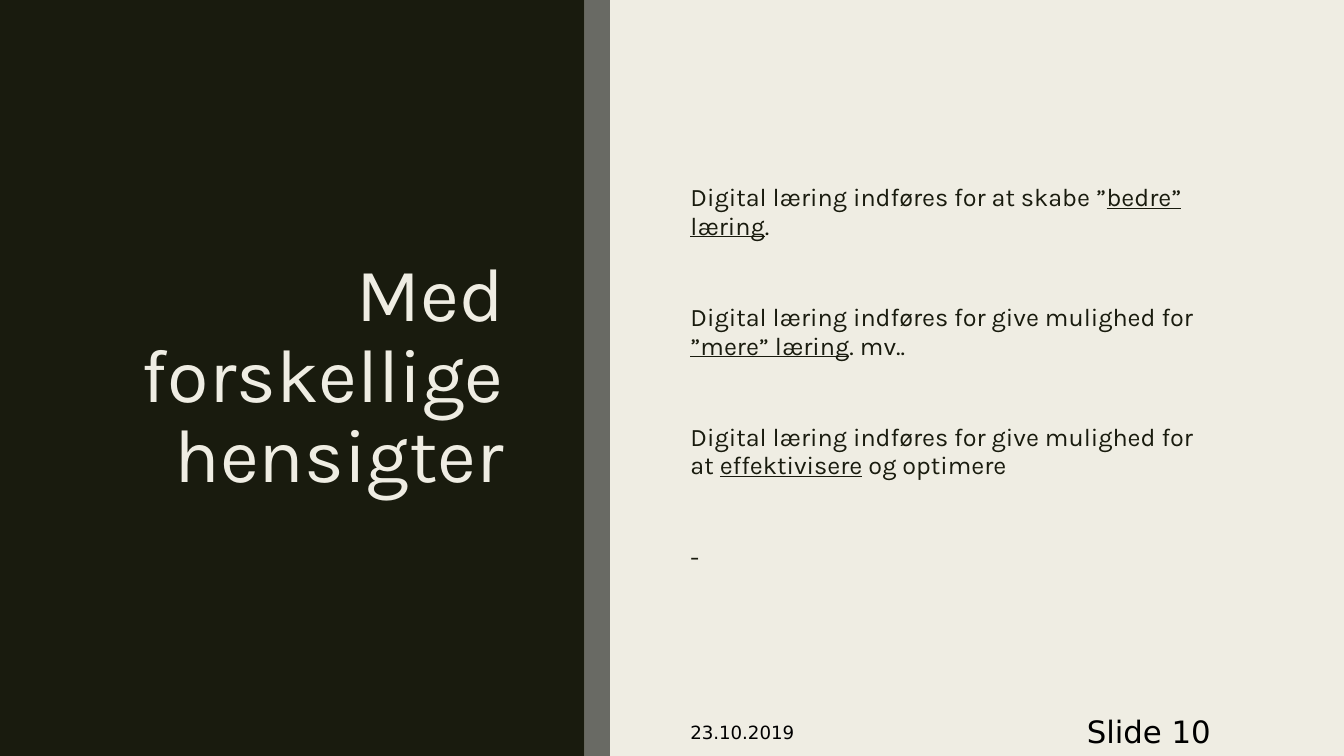
from dataclasses import dataclass

import pptx
import pptx.dml.color
import pptx.enum.shapes
import pptx.enum.text
import pptx.oxml.ns
import pptx.util
from lxml import etree

Pt = pptx.util.Pt
RGB = pptx.dml.color.RGBColor.from_string
ALIGN = pptx.enum.text.PP_ALIGN


@dataclass(frozen=True)
class Theme:
    dark: str = "191B0E"
    cream: str = "EFEDE3"
    grey: str = "696A64"
    black: str = "000000"
    text_font: str = "Karla"
    footer_font: str = "DejaVu Sans"
    title_size: int = 54
    body_size: int = 18
    date_size: int = 13
    number_size: int = 22


theme = Theme()


def set_frame(shape, left, top, width, height):
    shape.left, shape.top = Pt(left), Pt(top)
    shape.width, shape.height = Pt(width), Pt(height)
    frame = shape.text_frame
    frame.word_wrap = True
    frame.auto_size = pptx.enum.text.MSO_AUTO_SIZE.NONE
    frame.vertical_anchor = pptx.enum.text.MSO_ANCHOR.MIDDLE
    return frame


def style_run(run, font, size, color):
    run.font.name = font
    run.font.size = Pt(size)
    run.font.color.rgb = RGB(color)


# Slide and background
deck = pptx.Presentation()
deck.slide_width, deck.slide_height = Pt(960), Pt(540)
slide = deck.slides.add_slide(deck.slide_layouts[1])
slide.background.fill.solid()
slide.background.fill.fore_color.rgb = RGB(theme.cream)
title, intentions = slide.placeholders

# Dark panel and grey band, placed behind the text
for left, width, color in ((0, 417.6, theme.dark), (417.6, 18, theme.grey)):
    panel = slide.shapes.add_shape(
        pptx.enum.shapes.MSO_SHAPE.RECTANGLE, Pt(left), 0, Pt(width), Pt(540))
    panel.shadow.inherit = False
    panel.fill.solid()
    panel.fill.fore_color.rgb = RGB(color)
    panel.line.fill.background()
    title.element.addprevious(panel.element)

# Title
heading = set_frame(title, 50.4, 62.64, 316.8, 414.72)
heading.text = "Med forskellige hensigter"
heading.paragraphs[0].alignment = ALIGN.RIGHT
heading.paragraphs[0].line_spacing = 0.89
style_run(heading.paragraphs[0].runs[0],
          theme.text_font, theme.title_size, theme.cream)

# Intentions: plain start, underlined key words, plain end
statements = [
    ("Digital læring indføres for at skabe ”", "bedre” læring", "."),
    ("Digital læring indføres for give mulighed for ", "”mere” læring", ". mv.."),
    ("Digital læring indføres for give mulighed for at ", "effektivisere",
     " og optimere"),
    ("-",),
]
body = set_frame(intentions, 486, 62.64, 385.2, 414.72)
for index, parts in enumerate(statements):
    statement = body.add_paragraph() if index else body.paragraphs[0]
    properties = statement._p.get_or_add_pPr()
    properties.set("marL", "0")
    properties.set("indent", "0")
    etree.SubElement(properties, pptx.oxml.ns.qn("a:buNone"))
    statement.alignment = ALIGN.LEFT
    statement.line_spacing = 0.94
    statement.space_before = Pt(43 if index else 0)
    statement.space_after = Pt(2)
    for position, words in enumerate(parts):
        run = statement.add_run()
        run.text = words
        style_run(run, theme.text_font, theme.body_size, theme.dark)
        run.font.underline = position == 1

# Date and slide number
footers = [
    ("23.10.2019", 486, 96.5, theme.date_size, ALIGN.LEFT),
    ("Slide 10", 745.9, 126, theme.number_size, ALIGN.RIGHT),
]
for words, left, width, size, alignment in footers:
    footer = set_frame(slide.shapes.add_textbox(0, 0, 0, 0),
                       left, 508.3, width, 31.7)
    footer.text = words
    line = footer.paragraphs[0]
    line.alignment = alignment
    line.line_spacing = 0.9
    line.space_after = Pt(6)
    style_run(line.runs[0], theme.footer_font, size, theme.black)

deck.save("out.pptx")
